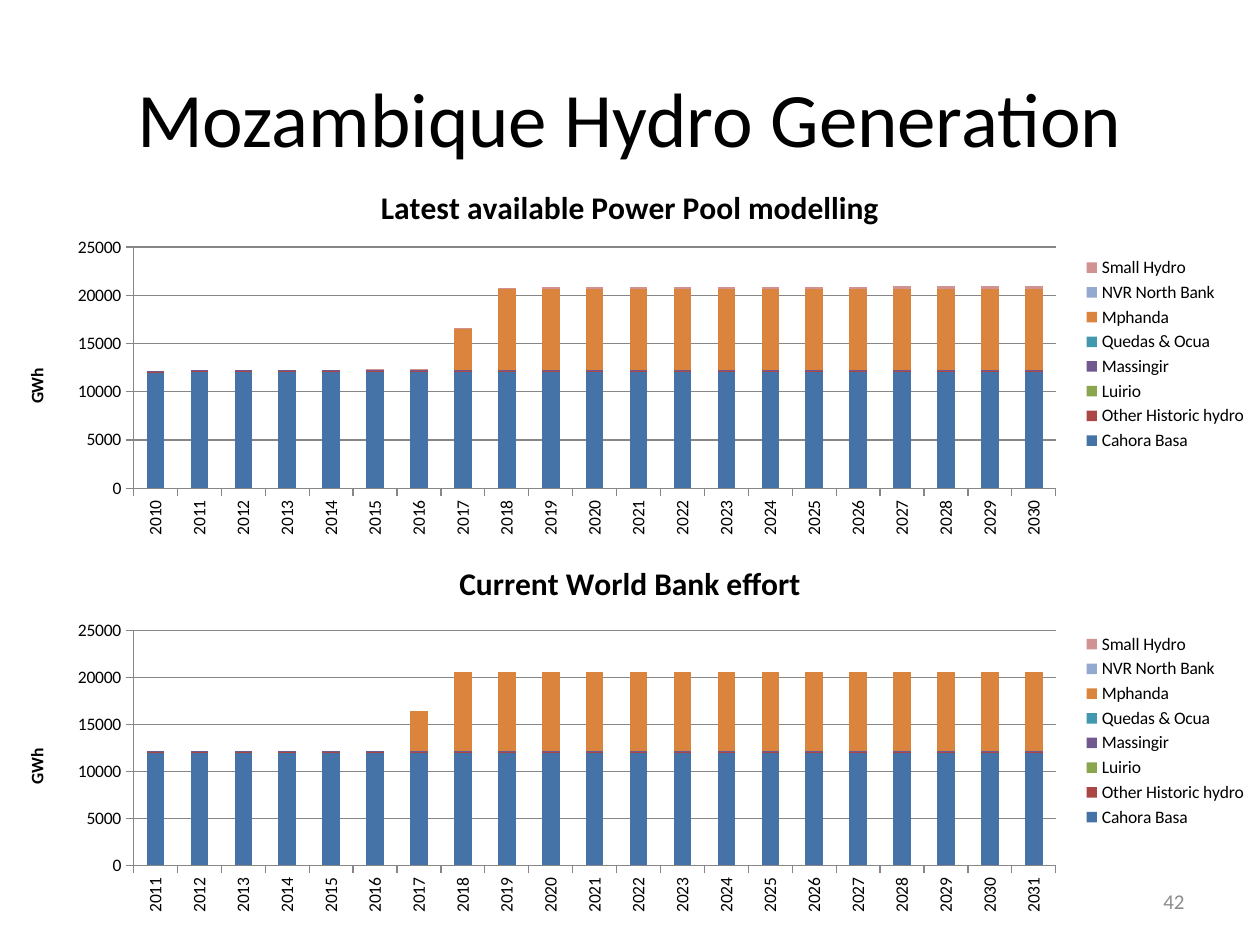
"""Build the Mozambique hydro generation slide with two stacked column charts."""
from dataclasses import dataclass

from lxml.etree import SubElement
from pptx import Presentation
from pptx.chart.data import CategoryChartData
from pptx.dml.color import RGBColor
from pptx.enum.chart import XL_CHART_TYPE, XL_LEGEND_POSITION, XL_TICK_MARK
from pptx.enum.text import MSO_ANCHOR, PP_ALIGN
from pptx.oxml.ns import qn
from pptx.util import Cm, Pt

TITLE = "Mozambique Hydro Generation"
PAGE = "42"
UNIT = "GWh"
ZEROS = [0] * 21

CHARTS = [
    {
        "title": "Latest available Power Pool modelling",
        "first_year": 2010,
        "top": 3.33,
        "plot": (0.106, 0.217, 0.732, 0.638),
        "series": {
            "Cahora Basa": [12000] * 21,
            "Other Historic hydro": [100] + [200] * 20,
            "Luirio": ZEROS,
            "Massingir": [100] * 21,
            "Quedas & Ocua": ZEROS,
            "Mphanda": [0] * 7 + [4200] + [8400] * 13,
            "NVR North Bank": ZEROS,
            "Small Hydro": [0] * 5 + [100] * 4 + [200] * 8 + [300] * 4,
        },
    },
    {
        "title": "Current World Bank effort",
        "first_year": 2011,
        "top": 10.92,
        "plot": (0.106, 0.235, 0.732, 0.622),
        "series": {
            "Cahora Basa": [12000] * 21,
            "Other Historic hydro": [100] * 21,
            "Luirio": ZEROS,
            "Massingir": [100] * 21,
            "Quedas & Ocua": ZEROS,
            "Mphanda": [0] * 6 + [4200] + [8400] * 14,
            "NVR North Bank": ZEROS,
            "Small Hydro": ZEROS,
        },
    },
]


@dataclass(frozen=True)
class Theme:
    font: str = "Calibri"
    ink: str = "000000"
    muted: str = "8C8C8C"
    line: str = "868686"
    series: tuple = ("4572A7", "AA4643", "89A54E", "71588F",
                     "4198AF", "DB843D", "93A9CF", "D19392")
    title: int = 44
    chart_title: int = 18
    label: int = 10
    page: int = 12


THEME = Theme()


def style(font, size, color, bold=False):
    font.name = THEME.font
    font.size = Pt(size)
    font.bold = bold
    font.color.rgb = RGBColor.from_string(color)


def add_text(s, box, text, size, color, align):
    tf = s.shapes.add_textbox(*map(Cm, box)).text_frame
    tf.word_wrap = True
    tf.vertical_anchor = MSO_ANCHOR.MIDDLE
    tf.text = text
    p = tf.paragraphs[0]
    p.alignment = align
    style(p.runs[0].font, size, color)


def set_title(owner, text, size):
    tf = owner.text_frame
    tf.text = text
    style(tf.paragraphs[0].runs[0].font, size, THEME.ink, True)


def set_plot_layout(chart, plot):
    area = chart._chartSpace.chart.plotArea
    layout = area.find(qn("c:layout"))
    if layout is None:
        layout = SubElement(area, qn("c:layout"))
        area.insert(0, layout)
    manual = SubElement(layout, qn("c:manualLayout"))
    values = [("layoutTarget", "inner"), ("xMode", "edge"), ("yMode", "edge")]
    for tag, val in values + list(zip("xywh", plot)):
        SubElement(manual, qn(f"c:{tag}")).set("val", str(val))


def style_axis(axis):
    axis.major_tick_mark = XL_TICK_MARK.OUTSIDE
    axis.minor_tick_mark = XL_TICK_MARK.NONE
    axis.format.line.color.rgb = RGBColor.from_string(THEME.line)
    style(axis.tick_labels.font, THEME.label, THEME.ink)


def add_hydro_chart(s, item):
    data = CategoryChartData(number_format="General")
    first = item["first_year"]
    data.categories = [str(year) for year in range(first, first + 21)]
    for name, values in item["series"].items():
        data.add_series(name, values)
    chart = s.shapes.add_chart(XL_CHART_TYPE.COLUMN_STACKED, Cm(0), Cm(item["top"]),
                               Cm(25.4), Cm(7.62), data).chart
    style(chart.font, THEME.label, THEME.ink)
    chart.has_title = True
    set_title(chart.chart_title, item["title"], THEME.chart_title)
    chart.chart_title.include_in_layout = False

    plot = chart.plots[0]
    plot.gap_width = 150
    plot.overlap = 100
    plot.vary_by_categories = False
    for series, color in zip(plot.series, THEME.series):
        series.format.fill.solid()
        series.format.fill.fore_color.rgb = RGBColor.from_string(color)

    years, energy = chart.category_axis, chart.value_axis
    style_axis(years)
    style_axis(energy)
    years._element.find(qn("c:txPr")).find(qn("a:bodyPr")).set("rot", "-5400000")
    energy.minimum_scale, energy.maximum_scale, energy.major_unit = 0, 25000, 5000
    energy.has_major_gridlines = True
    energy.major_gridlines.format.line.color.rgb = RGBColor.from_string(THEME.line)
    energy.has_title = True
    set_title(energy.axis_title, UNIT, THEME.label)
    body = energy.axis_title.text_frame._txBody.find(qn("a:bodyPr"))
    body.set("rot", "-5400000")
    body.set("vert", "horz")

    chart.has_legend = True
    chart.legend.position = XL_LEGEND_POSITION.RIGHT
    chart.legend.include_in_layout = False
    style(chart.legend.font, THEME.label, THEME.ink)
    set_plot_layout(chart, item["plot"])


def main():
    prs = Presentation()
    prs.slide_width, prs.slide_height = Cm(25.4), Cm(19.05)
    s = prs.slides.add_slide(prs.slide_layouts[6])
    add_text(s, (1.27, 0.76, 22.86, 3.18), TITLE, THEME.title, THEME.ink, PP_ALIGN.CENTER)
    for item in reversed(CHARTS):
        add_hydro_chart(s, item)
    add_text(s, (18.2, 17.66, 5.93, 1.01), PAGE, THEME.page, THEME.muted, PP_ALIGN.RIGHT)
    prs.save("out.pptx")


if __name__ == "__main__":
    main()
